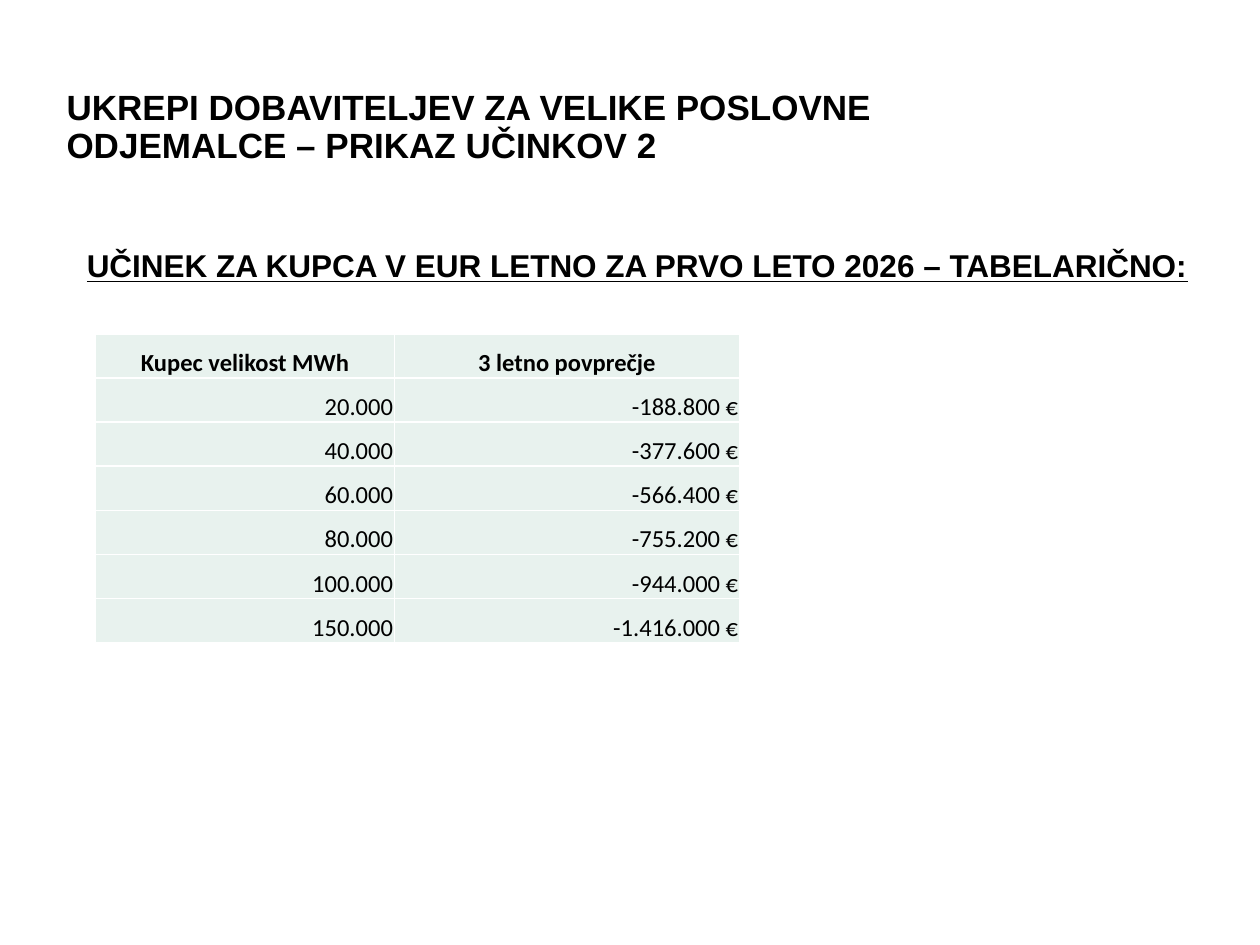
import pptx
import pptx.dml.color
import pptx.enum.text
import pptx.oxml
import pptx.oxml.ns
import pptx.util

Inches = pptx.util.Inches
Pt = pptx.util.Pt
Align = pptx.enum.text.PP_ALIGN
Anchor = pptx.enum.text.MSO_ANCHOR


def color(value):
    return pptx.dml.color.RGBColor.from_string(value)


def style(para, font_name, size, bold, align):
    para.alignment = align
    for span in para.runs:
        span.font.name = font_name
        span.font.size = Pt(size)
        span.font.bold = bold
        span.font.color.rgb = color("000000")


deck = pptx.Presentation()
deck.slide_width = Inches(10)
deck.slide_height = Inches(7.5)
page = deck.slides.add_slide(deck.slide_layouts[6])

headings = [
    ("UKREPI DOBAVITELJEV ZA VELIKE POSLOVNE ODJEMALCE – PRIKAZ UČINKOV 2",
     (0.43, 0.29, 7.3, 1.45), 20, Align.LEFT, Anchor.MIDDLE, False),
    ("UČINEK ZA KUPCA V EUR LETNO ZA PRVO LETO 2026 – TABELARIČNO:",
     (0.59, 1.94, 9.11, 5.02), 18, Align.JUSTIFY, Anchor.TOP, True),
]
for text, place, size, align, anchor, underline in headings:
    box = page.shapes.add_textbox(*[Inches(length) for length in place])
    box.text_frame.word_wrap = True
    box.text_frame.vertical_anchor = anchor
    box.text_frame.text = text
    para = box.text_frame.paragraphs[0]
    para.line_spacing = 0.9
    style(para, "Arial", size, True, align)
    para.runs[0].font.underline = underline

rows = [
    ("Kupec velikost MWh", "3 letno povprečje"),
    ("20.000", "-188.800 €"),
    ("40.000", "-377.600 €"),
    ("60.000", "-566.400 €"),
    ("80.000", "-755.200 €"),
    ("100.000", "-944.000 €"),
    ("150.000", "-1.416.000 €"),
]
column_widths = [2.37, 2.74]
row_height = 0.35
table = page.shapes.add_table(
    len(rows), len(column_widths), Inches(0.76), Inches(2.65),
    Inches(sum(column_widths)), Inches(row_height * len(rows))).table
for column, width in zip(table.columns, column_widths):
    column.width = Inches(width)

for row_index, values in enumerate(rows):
    table.rows[row_index].height = Inches(row_height)
    is_header = row_index == 0
    for column_index, value in enumerate(values):
        cell = table.cell(row_index, column_index)
        cell.text_frame.text = value
        style(cell.text_frame.paragraphs[0], "Calibri", 14, is_header,
              Align.CENTER if is_header else Align.RIGHT)
        cell.vertical_anchor = Anchor.BOTTOM
        cell.margin_left = cell.margin_right = cell.margin_top = Inches(0.01)
        cell.margin_bottom = Inches(0)
        properties = cell._tc.get_or_add_tcPr()
        for side in ("lnL", "lnR", "lnT", "lnB"):
            properties.append(pptx.oxml.parse_xml(
                f'<a:{side} {pptx.oxml.ns.nsdecls("a")} w="{Pt(1)}"><a:solidFill>'
                f'<a:srgbClr val="FFFFFF"/></a:solidFill></a:{side}>'))
        cell.fill.solid()
        cell.fill.fore_color.rgb = color("E8F2EE")

deck.save("out.pptx")
